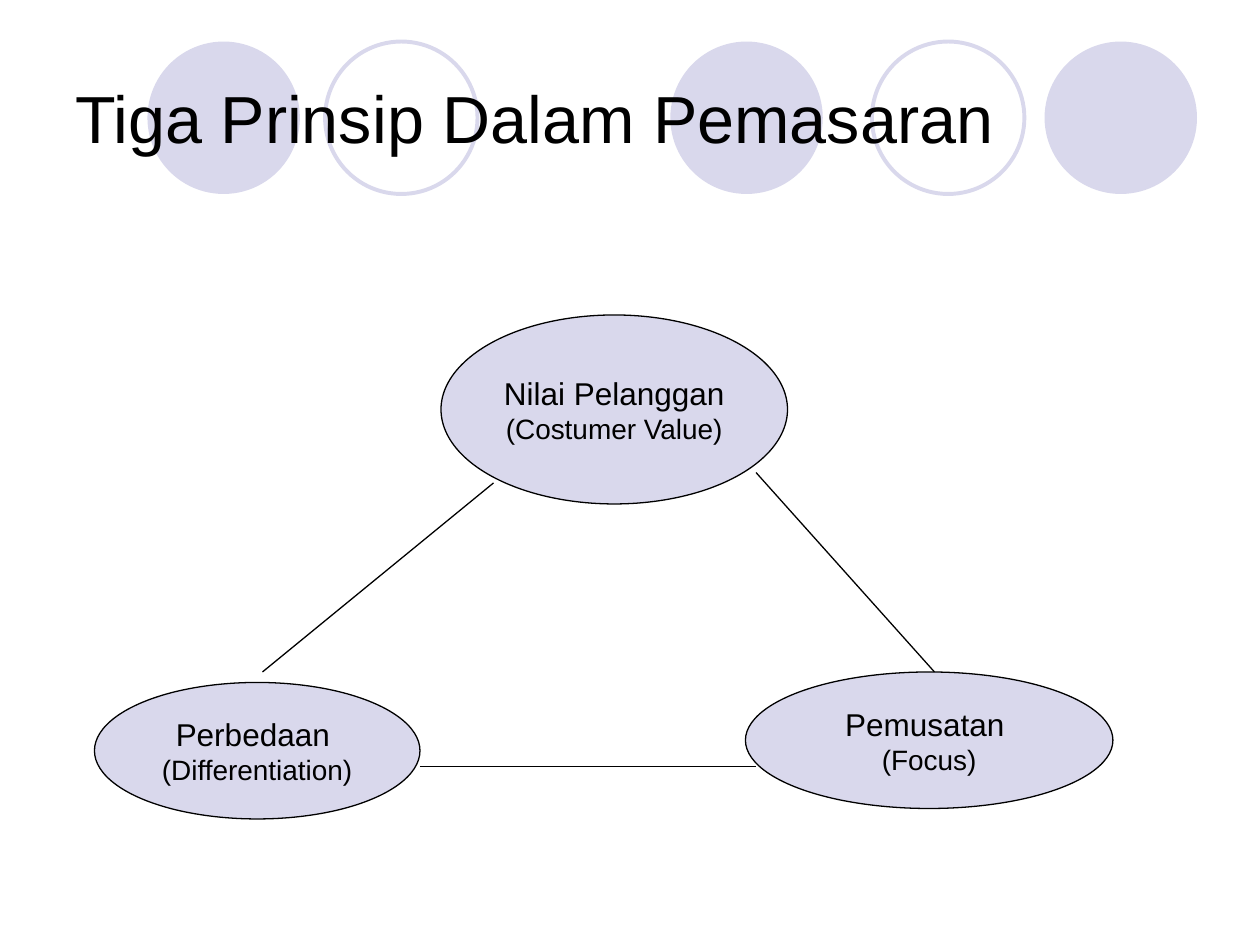
from dataclasses import dataclass

from lxml import etree
from pptx import Presentation
from pptx.dml.color import RGBColor
from pptx.enum.shapes import MSO_CONNECTOR, MSO_SHAPE
from pptx.enum.text import MSO_ANCHOR, PP_ALIGN
from pptx.oxml.ns import qn
from pptx.util import Inches, Pt

OVAL = MSO_SHAPE.OVAL
STRAIGHT = MSO_CONNECTOR.STRAIGHT
MIDDLE = MSO_ANCHOR.MIDDLE
LEFT, CENTER = PP_ALIGN.LEFT, PP_ALIGN.CENTER

BLANK_LAYOUT = 6
CELLS_PER_INCH = 12  # the diagram sits on a grid of 120 columns by 90 rows


@dataclass(frozen=True)
class Theme:
    font: str = "Arial"
    ink: RGBColor = RGBColor(0x00, 0x00, 0x00)
    lilac: RGBColor = RGBColor(0xD9, 0xD8, 0xEC)
    title_size: int = 38
    name_size: int = 18
    gloss_size: int = 16
    thin: float = 0.75
    thick: float = 2.25


THEME = Theme()

# Header circles: left edge in inches, filled or outlined
CIRCLE_TOP, CIRCLE_SIZE = 0.33, 1.21
CIRCLES = [(5.32, True), (8.29, True), (1.17, True), (6.92, False), (2.58, False)]

# Principles: column, row, columns wide, rows high, name, gloss
PRINCIPLES = [
    (42, 30, 33, 18, "Nilai Pelanggan", "(Costumer Value)"),
    (9, 65, 31, 13, "Perbedaan ", "(Differentiation)"),
    (71, 64, 35, 13, "Pemusatan ", "(Focus)"),
]

# Links: start column and row, end column and row
LINKS = [(25, 64, 47, 46), (72, 45, 89, 64), (40, 73, 72, 73)]


def grid(*cells):
    return [Inches(cell / CELLS_PER_INCH) for cell in cells]


def add_oval(slide, bounds, fill, line, width):
    oval = slide.shapes.add_shape(OVAL, *bounds)
    oval.shadow.inherit = False
    if fill is None:
        oval.fill.background()
    else:
        oval.fill.solid()
        oval.fill.fore_color.rgb = fill
    if line is None:
        oval.line.fill.background()
    else:
        oval.line.color.rgb = line
        oval.line.width = Pt(width)
    return oval


def write_lines(frame, lines, align, wrap):
    frame.word_wrap = wrap
    frame.vertical_anchor = MIDDLE
    for index, (text, size) in enumerate(lines):
        para = frame.add_paragraph() if index else frame.paragraphs[0]
        para.text = text
        para.alignment = align
        para.font.name = THEME.font
        para.font.size = Pt(size)
        para.font.color.rgb = THEME.ink


def add_circle(slide, left, filled):
    bounds = [Inches(n) for n in (left, CIRCLE_TOP, CIRCLE_SIZE, CIRCLE_SIZE)]
    fill, line = (THEME.lilac, None) if filled else (None, THEME.lilac)
    add_oval(slide, bounds, fill, line, THEME.thick)


def add_title(slide, text):
    box = slide.shapes.add_textbox(Inches(0.5), Inches(0.3), Inches(9), Inches(1.25))
    write_lines(box.text_frame, [(text, THEME.title_size)], LEFT, True)


def add_principle(slide, column, row, columns, rows, name, gloss):
    bounds = grid(column, row, columns, rows)
    oval = add_oval(slide, bounds, THEME.lilac, THEME.ink, THEME.thin)
    lines = [(name, THEME.name_size), (gloss, THEME.gloss_size)]
    write_lines(oval.text_frame, lines, CENTER, False)


def add_link(slide, *ends):
    link = slide.shapes.add_connector(STRAIGHT, *grid(*ends))
    link.line.color.rgb = THEME.ink
    link.line.width = Pt(THEME.thin)
    etree.SubElement(link._element.spPr, qn("a:effectLst"))


def main():
    deck = Presentation()
    deck.slide_width, deck.slide_height = Inches(10), Inches(7.5)
    slide = deck.slides.add_slide(deck.slide_layouts[BLANK_LAYOUT])

    # Header
    for circle in CIRCLES:
        add_circle(slide, *circle)
    add_title(slide, "Tiga Prinsip Dalam Pemasaran")

    # Triangle of principles
    for principle in PRINCIPLES:
        add_principle(slide, *principle)
    for link in LINKS:
        add_link(slide, *link)

    deck.save("out.pptx")


if __name__ == "__main__":
    main()
